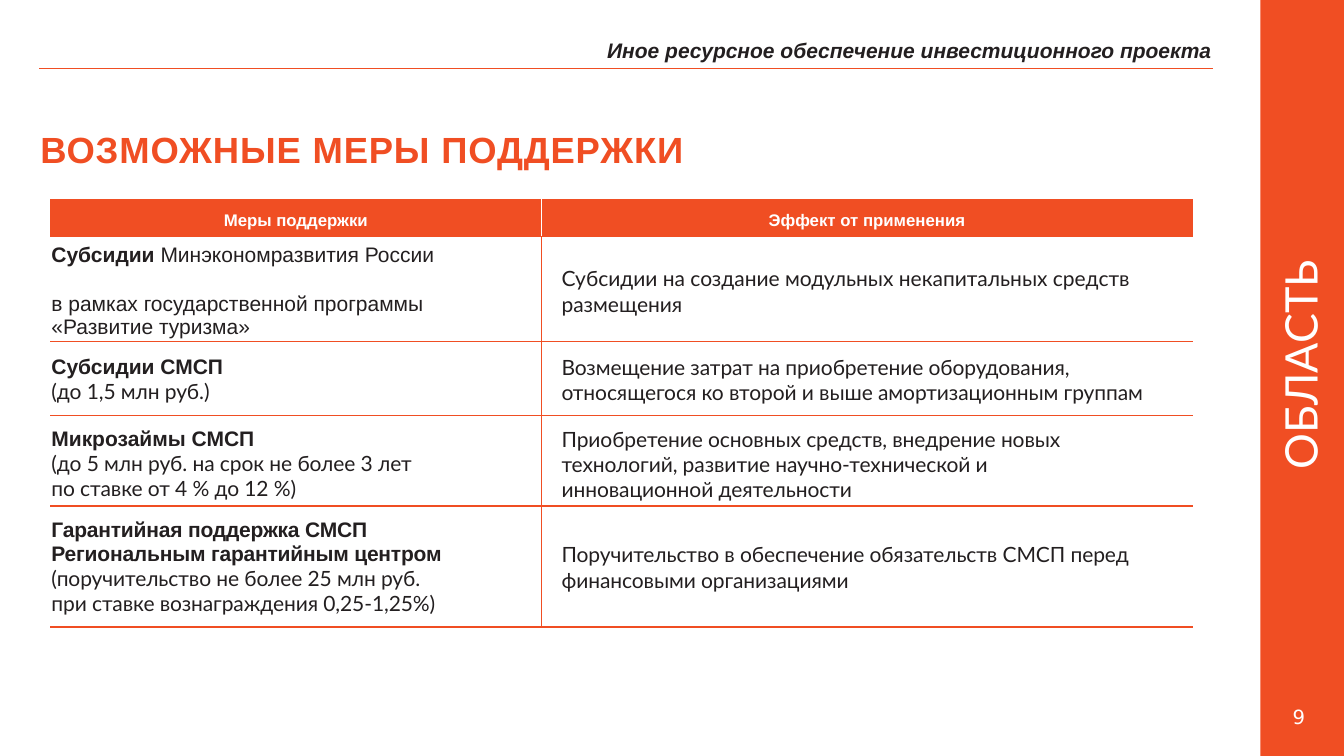
from dataclasses import dataclass

from lxml.etree import SubElement
from pptx import Presentation
from pptx.dml.color import RGBColor
from pptx.enum.shapes import MSO_CONNECTOR as CONN, MSO_SHAPE as SHAPE
from pptx.enum.text import MSO_ANCHOR as ANCHOR, PP_ALIGN as ALIGN
from pptx.oxml.ns import qn
from pptx.util import Inches, Pt

COLORS = {"accent": "F04E23", "ink": "231F20", "white": "FFFFFF"}
COLUMNS = (4.87, 6.46)
HEADINGS = ("Меры поддержки", "Эффект от применения")
HEADING_HEIGHT = 0.38
TABLE_LEFT, TABLE_TOP = 0.5, 1.97
BAR_LEFT, BAR_WIDTH = 12.5, 0.83


@dataclass(frozen=True)
class Style:
    size: float
    font: str = "Arial"
    color: str = "ink"
    bold: bool = False
    italic: bool = False
    spacing: float = 0


@dataclass(frozen=True)
class Measure:
    name: str
    details: str
    effect: str
    height: float
    top: float
    details_font: str = "Lato"
    name_right: float = 0.01
    effect_right: float = 0.01
    name_spacing: float = 0
    text_spacing: float = -0.06


HEADING = Style(12, color="white", bold=True)

MEASURES = (
    Measure("Субсидии ",
            "Минэкономразвития России\n\nв рамках государственной программы «Развитие туризма»",
            "Субсидии на создание модульных некапитальных средств размещения",
            0.89, 0.04, details_font="Arial", name_right=0.6, text_spacing=0),
    Measure("Субсидии СМСП\n", "(до 1,5 млн руб.)",
            "Возмещение затрат на приобретение оборудования, "
            "относящегося ко второй и выше амортизационным группам",
            0.73, 0.03),
    Measure("Микрозаймы СМСП\n",
            "(до 5 млн руб. на срок не более 3 лет\nпо ставке от 4 % до 12 %)",
            "Приобретение основных средств, внедрение новых технологий, "
            "развитие научно-технической и инновационной деятельности",
            0.9, 0.07, effect_right=1),
    Measure("Гарантийная поддержка СМСП\nРегиональным гарантийным центром\n",
            "(поручительство не более 25 млн руб.\nпри ставке вознаграждения 0,25-1,25%)",
            "Поручительство в обеспечение обязательств СМСП перед финансовыми организациями",
            1.2, 0.02, name_spacing=-0.14),
)


def rgb(name: str) -> RGBColor:
    return RGBColor.from_string(COLORS[name])


def add_text(p, text: str, style: Style) -> None:
    """Append styled runs, turning each newline into a line break of the same size."""
    for i, line in enumerate(text.split("\n")):
        if i:
            p.add_line_break()
            SubElement(p._p[-1], qn("a:rPr"), sz=str(int(style.size * 100)))
        if not line:
            continue
        r = p.add_run()
        r.text = line
        font = r.font
        font.name, font.size = style.font, Pt(style.size)
        font.bold, font.italic = style.bold, style.italic
        font.color.rgb = rgb(style.color)
        if style.spacing:
            r._r.get_or_add_rPr().set("spc", str(round(style.spacing * 100)))


def fill_box(sp, text: str, style: Style, align=ALIGN.LEFT, anchor=ANCHOR.TOP,
             top: float = 0.01, wrap: bool = True) -> None:
    tf = sp.text_frame
    tf.word_wrap, tf.vertical_anchor = wrap, anchor
    tf.margin_left = tf.margin_right = tf.margin_bottom = 0
    tf.margin_top = Inches(top)
    p = tf.paragraphs[0]
    p.alignment = align
    add_text(p, text, style)


def add_box(slide, left: float, top: float, width: float, height: float):
    return slide.shapes.add_textbox(*map(Inches, (left, top, width, height)))


def set_cell(cell, parts, top: float, left: float = 0.01, right: float = 0.01,
             align=ALIGN.LEFT) -> None:
    cell.vertical_anchor = ANCHOR.MIDDLE
    cell.margin_left, cell.margin_right = Inches(left), Inches(right)
    cell.margin_top, cell.margin_bottom = Inches(top), 0
    p = cell.text_frame.paragraphs[0]
    p.alignment = align
    for text, style in parts:
        add_text(p, text, style)


def set_borders(cell, fill: str | None = None, **sides: str) -> None:
    """Draw the named sides (lnL, lnR, lnT, lnB), hide the others, then fill the cell."""
    tc_pr = cell._tc.get_or_add_tcPr()
    for side in ("lnL", "lnR", "lnT", "lnB"):
        ln = SubElement(tc_pr, qn(f"a:{side}"), w=str(Pt(1)))
        if side in sides:
            solid = SubElement(ln, qn("a:solidFill"))
            SubElement(solid, qn("a:srgbClr"), val=COLORS[sides[side]])
        else:
            SubElement(ln, qn("a:noFill"))
    if fill:
        cell.fill.solid()
        cell.fill.fore_color.rgb = rgb(fill)
    else:
        cell.fill.background()


def add_measures_table(slide) -> None:
    heights = [HEADING_HEIGHT] + [m.height for m in MEASURES]
    frame = slide.shapes.add_table(
        len(heights), len(COLUMNS), Inches(TABLE_LEFT), Inches(TABLE_TOP),
        Inches(sum(COLUMNS)), Inches(sum(heights)))
    table = frame.table
    table.horz_banding = False
    for column, width in zip(table.columns, COLUMNS):
        column.width = Inches(width)
    for row, height in zip(table.rows, heights):
        row.height = Inches(height)

    inner_sides = ("lnR", "lnL")
    for col, (heading, side) in enumerate(zip(HEADINGS, inner_sides)):
        cell = table.cell(0, col)
        set_cell(cell, [(heading, HEADING)], 0.06, align=ALIGN.CENTER)
        set_borders(cell, "accent", **{side: "white"})

    for row, m in enumerate(MEASURES, 1):
        name, effect = table.cell(row, 0), table.cell(row, 1)
        name_style = Style(15, bold=True, spacing=m.name_spacing)
        details_style = Style(15, m.details_font, spacing=m.text_spacing)
        effect_style = Style(15, "Lato", spacing=m.text_spacing)
        set_cell(name, [(m.name, name_style), (m.details, details_style)], m.top,
                 right=m.name_right)
        set_cell(effect, [(m.effect, effect_style)], m.top, left=0.2,
                 right=m.effect_right)
        for cell, side in zip((name, effect), inner_sides):
            set_borders(cell, lnT="accent", lnB="accent", **{side: "accent"})


def add_sidebar(slide) -> None:
    bar = slide.shapes.add_shape(SHAPE.RECTANGLE, Inches(BAR_LEFT), 0,
                                 Inches(BAR_WIDTH), Inches(7.5))
    bar.shadow.inherit = False
    bar.fill.solid()
    bar.fill.fore_color.rgb = rgb("accent")
    bar.line.fill.background()

    region = add_box(slide, 11.69, 3.32, 2.4, 0.6)
    region.rotation = -90
    fill_box(region, "ОБЛАСТЬ", Style(32, "Lato", "white"), ALIGN.CENTER,
             ANCHOR.MIDDLE, top=0, wrap=False)
    number = add_box(slide, 12.82, 6.97, 0.24, 0.3)
    fill_box(number, "9", Style(14, "DejaVu Sans", "white"), top=0.02)


def add_header(slide) -> None:
    header = add_box(slide, 6.02, 0.36, 6.0, 0.28)
    fill_box(header, "Иное ресурсное обеспечение инвестиционного проекта",
             Style(15, bold=True, italic=True), ALIGN.RIGHT, wrap=False)
    rule = slide.shapes.add_connector(CONN.STRAIGHT, Inches(0.39), Inches(0.68),
                                      Inches(12.03), Inches(0.68))
    rule.line.color.rgb = rgb("accent")
    rule.line.width = Pt(0.5)
    SubElement(rule._element.spPr, qn("a:effectLst"))


def main() -> None:
    prs = Presentation()
    prs.slide_width, prs.slide_height = Inches(13.33), Inches(7.5)
    slide = prs.slides.add_slide(prs.slide_layouts[5])
    add_sidebar(slide)
    title = slide.shapes.title
    title.left, title.top = Inches(0.4), Inches(1.25)
    title.width, title.height = Inches(6.49), Inches(0.46)
    fill_box(title, "ВОЗМОЖНЫЕ МЕРЫ ПОДДЕРЖКИ",
             Style(26, color="accent", bold=True, spacing=0.6))
    add_header(slide)
    add_measures_table(slide)
    prs.save("out.pptx")


if __name__ == "__main__":
    main()
